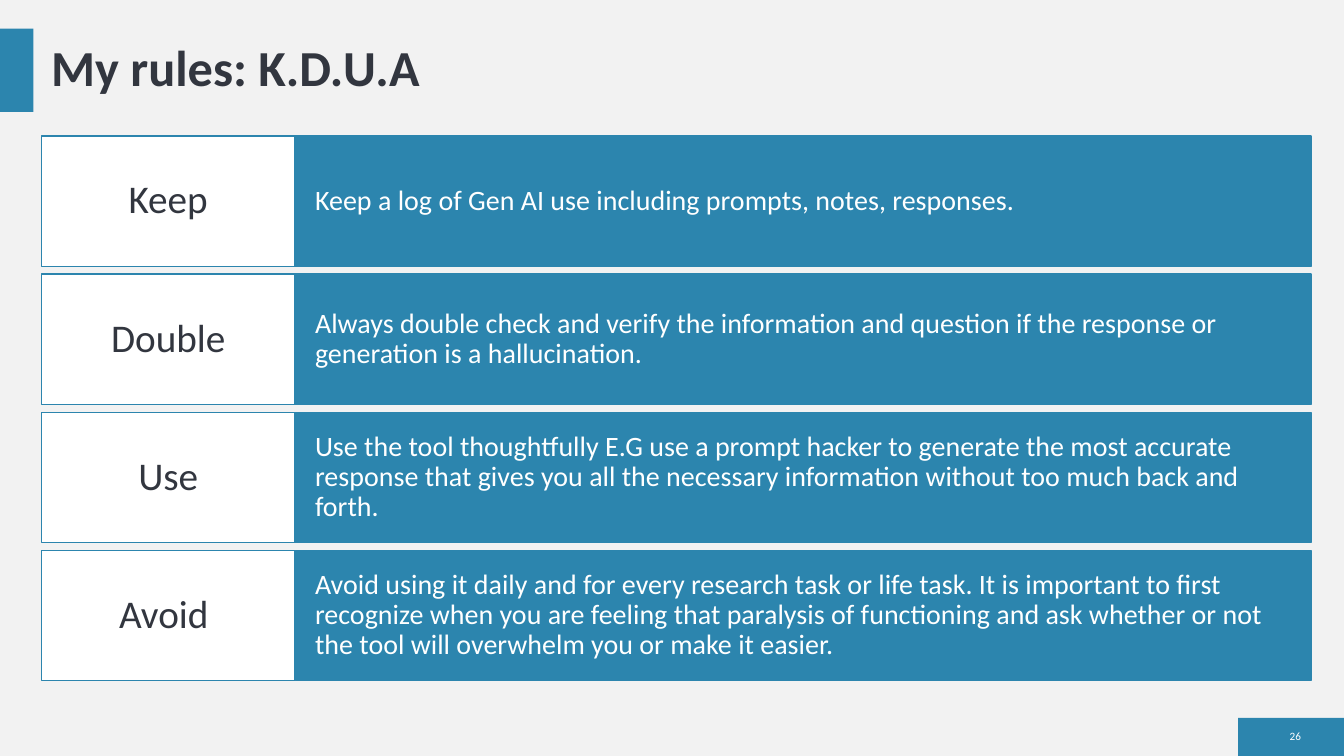
"""Build the K.D.U.A rules slide."""
from pptx import Presentation
from pptx import util as u
from pptx.dml.color import RGBColor
from pptx.enum import shapes, text

COLOURS = {"background": "F2F2F2", "blue": "2C85AE", "dark": "32363F", "white": "FFFFFF"}
RULES = [
    ("Keep", "Keep a log of Gen AI use including prompts, notes, responses."),
    ("Double", "Always double check and verify the information and question if the response or "
               "generation is a hallucination."),
    ("Use", "Use the tool thoughtfully E.G use a prompt hacker to generate the most accurate response "
            "that gives you all the necessary information without too much back and forth."),
    ("Avoid ", "Avoid using it daily and for every research task or life task. It is important to first "
               "recognize when you are feeling that paralysis of functioning and ask whether or not "
               "the tool will overwhelm you or make it easier."),
]
LEFT, TOP, LABEL_WIDTH, RULE_WIDTH = 1.04, 3.43, 6.4, 25.6
ROW_HEIGHT, ROW_STEP = 3.28, 3.48


def colour(name):
    """Return the named colour."""
    return RGBColor.from_string(COLOURS[name])


def write(shape, words, size, ink, align=text.PP_ALIGN.LEFT, bold=False, inset=(0.25, 0.13)):
    """Write one vertically centred paragraph into a shape."""
    frame = shape.text_frame
    horizontal, vertical = map(u.Cm, inset)
    frame_format = {"word_wrap": True, "vertical_anchor": text.MSO_ANCHOR.MIDDLE,
                    "margin_left": horizontal, "margin_right": horizontal,
                    "margin_top": vertical, "margin_bottom": vertical}
    paragraph = frame.paragraphs[0]
    run = paragraph.add_run()
    run.text = words
    font_format = {"name": "Calibri", "size": u.Pt(size), "bold": bold}
    paragraph_format = {"alignment": align, "line_spacing": 0.9}
    for target, values in ((frame, frame_format), (paragraph, paragraph_format), (run.font, font_format)):
        for key, value in values.items():
            setattr(target, key, value)
    run.font.color.rgb = colour(ink)


def add_box(slide, place, fill, outlined=False):
    """Add a flat rectangle, with a blue outline if asked."""
    shape = slide.shapes.add_shape(shapes.MSO_SHAPE.RECTANGLE, *map(u.Cm, place))
    shape.shadow.inherit = False
    shape.fill.solid()
    shape.fill.fore_color.rgb = colour(fill)
    if outlined:
        shape.line.color.rgb = colour("blue")
        shape.line.width = u.Pt(1)
    else:
        shape.line.fill.background()
    return shape


def add_text(slide, place, words, size, ink, **options):
    """Add a text box."""
    write(slide.shapes.add_textbox(*map(u.Cm, place)), words, size, ink, **options)


def add_rule(slide, index, label, rule):
    """Add one row: a blue rule box and its white label box."""
    top = TOP + index * ROW_STEP
    rule_box = add_box(slide, (LEFT + LABEL_WIDTH, top, RULE_WIDTH, ROW_HEIGHT), "blue", True)
    write(rule_box, rule, 20, "white", inset=(0.5, 0.33))
    label_box = add_box(slide, (LEFT, top, LABEL_WIDTH, ROW_HEIGHT), "white", True)
    write(label_box, label, 28, "dark", align=text.PP_ALIGN.CENTER, inset=(0.33, 0.33))


def main():
    """Build and save the slide."""
    presentation = Presentation()
    presentation.slide_width, presentation.slide_height = u.Cm(33.87), u.Cm(19.05)
    slide = presentation.slides.add_slide(presentation.slide_layouts[6])
    slide.background.fill.solid()
    slide.background.fill.fore_color.rgb = colour("background")
    add_box(slide, (31.2, 18.09, 2.67, 0.96), "blue")
    add_box(slide, (0, 0.72, 0.84, 2.1), "blue")
    add_text(slide, (LEFT, 0.72, 32, 2.1), "My rules: K.D.U.A", 36, "dark", bold=True)
    add_text(slide, (32, 18.28, 1.04, 0.58), "26", 8, "white", align=text.PP_ALIGN.RIGHT)
    for index, (label, rule) in enumerate(RULES):
        add_rule(slide, index, label, rule)
    presentation.save("out.pptx")


if __name__ == "__main__":
    main()
